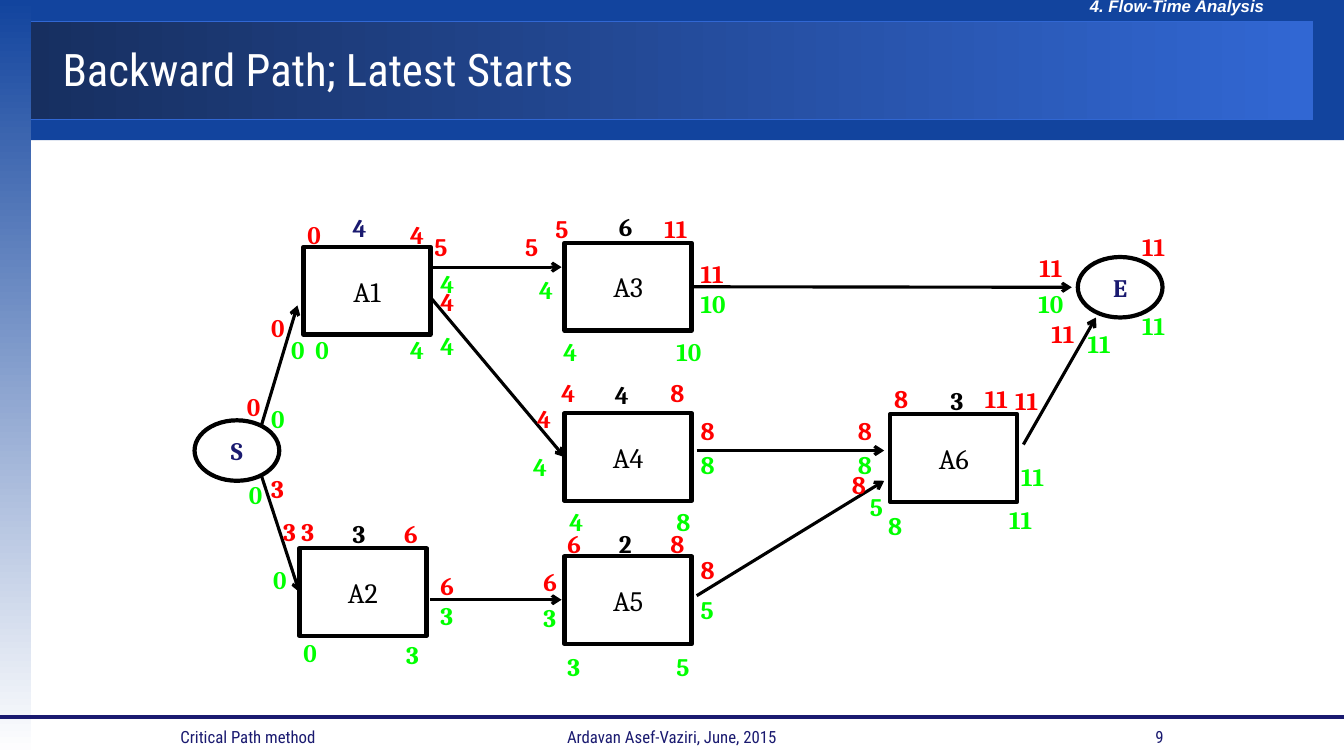
from dataclasses import dataclass

from lxml.etree import SubElement
from pptx import Presentation
from pptx.dml.color import RGBColor
from pptx.enum.shapes import MSO_CONNECTOR, MSO_SHAPE
from pptx.enum.text import MSO_ANCHOR, PP_ALIGN
from pptx.oxml.ns import qn
from pptx.util import Inches, Pt


@dataclass(frozen=True)
class Theme:
    """Colours, fonts and type sizes of the slide."""
    blue: str = "12449E"
    band_dark: str = "172F60"
    band_light: str = "3167D3"
    navy: str = "1A1A70"
    white: str = "FFFFFF"
    black: str = "000000"
    early: str = "00FF00"
    late: str = "FF0000"
    heading_font: str = "Roboto Condensed"
    diagram_font: str = "Cambria"
    header_font: str = "Arial"
    title_size: int = 32
    node_size: int = 20
    label_size: int = 18
    small_size: int = 12


T = Theme()

TASK_SIZE = (1.26, 0.87)
EVENT_SIZE = (0.84, 0.6)
TASKS = {
    "A1": (3.01, 2.45), "A2": (2.97, 5.44), "A3": (5.6, 2.41),
    "A4": (5.6, 4.1), "A5": (5.6, 5.52), "A6": (8.83, 4.11),
}
EVENTS = {"S": (1.93, 4.17), "E": (10.69, 2.55)}

ARROWS = [
    ((4.27, 2.65), (5.57, 2.65), None, None),
    ((4.27, 2.95), (5.57, 4.55), None, "A4"),
    ((4.27, 5.95), (5.57, 5.95), None, None),
    ((6.91, 4.47), (8.77, 4.47), None, None),
    ((6.91, 5.91), (8.77, 4.77), None, None),
    ((6.91, 2.85), (10.63, 2.85), "A3", None),
    ((10.15, 4.41), (10.87, 3.15), None, None),
    ((2.59, 4.23), (2.95, 3.03), None, None),
    ((2.59, 4.71), (2.95, 5.85), None, "A2"),
]

DURATIONS = {
    "2": [(6.04, 5.19)],
    "3": [(3.4, 5.09), (9.33, 3.77)],
    "4": [(6, 3.71)],
    "6": [(6.04, 2.05)],
}
EARLY_TIMES = {
    "0": [(2.59, 3.95), (2.37, 4.71), (2.79, 3.27), (2.61, 5.55), (3.03, 3.27), (2.91, 6.27)],
    "3": [(3.93, 6.29), (4.27, 5.91), (5.29, 5.93), (5.53, 6.41)],
    "4": [(3.97, 3.27), (4.27, 3.23), (4.27, 2.61), (5.25, 2.67), (5.19, 4.43),
          (5.55, 4.97), (5.49, 3.29)],
    "5": [(6.61, 6.41), (6.85, 5.85), (8.53, 4.83)],
    "8": [(6.61, 4.97), (6.85, 4.41), (8.41, 4.41), (8.71, 5.01)],
    "10": [(6.61, 3.29), (6.85, 2.81), (10.2, 2.81)],
    "11": [(9.91, 4.95), (10.69, 3.21), (11.23, 3.03), (10.03, 4.53)],
}
LATE_TIMES = {
    "0": [(2.95, 2.13), (2.59, 3.05), (2.35, 3.83)],
    "3": [(2.89, 5.07), (2.71, 5.07), (2.59, 4.65)],
    "4": [(5.47, 3.69), (5.23, 3.95), (4.27, 2.79), (3.97, 2.13)],
    "5": [(5.41, 2.07), (5.11, 2.25), (4.21, 2.25)],
    "6": [(5.53, 5.19), (5.29, 5.57), (4.27, 5.61), (3.91, 5.09)],
    "8": [(8.77, 3.75), (8.41, 4.07), (8.35, 4.61), (6.85, 4.07), (6.85, 5.45),
          (6.55, 3.69), (6.55, 5.19)],
    "11": [(11.23, 2.25), (10.21, 2.45), (10.33, 3.11), (6.85, 2.51), (9.97, 3.77),
           (6.49, 2.07), (9.67, 3.75)],
}


def rgb(value):
    """Turn a hex string into a colour."""
    return RGBColor.from_string(value)


def write(sp, text, font, size, color, bold=False, italic=False, align=PP_ALIGN.LEFT):
    """Put one formatted line of text into a shape."""
    tf = sp.text_frame
    tf.text = text
    tf.word_wrap = True
    p = tf.paragraphs[0]
    p.alignment = align
    f = p.runs[0].font
    f.name, f.size, f.bold, f.italic = font, Pt(size), bold, italic
    f.color.rgb = rgb(color)
    return tf


def add_text(s, box, text, font, size, color, **style):
    """Add a text box with one line."""
    sp = s.shapes.add_textbox(*map(Inches, box))
    return write(sp, text, font, size, color, **style)


def add_band(s, box, colors, angle=0, line=None):
    """Add a plain or gradient rectangle of the background."""
    sp = s.shapes.add_shape(MSO_SHAPE.RECTANGLE, *map(Inches, box))
    sp.shadow.inherit = False
    if len(colors) == 1:
        sp.fill.solid()
        sp.fill.fore_color.rgb = rgb(colors[0])
    else:
        sp.fill.gradient()
        sp.fill.gradient_angle = angle
        for stop, color in zip(sp.fill.gradient_stops, colors):
            stop.color.rgb = rgb(color)
    if line:
        sp.line.color.rgb = rgb(line)
        sp.line.width = Pt(0.75)
    else:
        sp.line.fill.background()


def add_node(s, kind, at, size, name, text_size, color, bold):
    """Add an outlined node with its centred name."""
    sp = s.shapes.add_shape(kind, *map(Inches, at + size))
    sp.shadow.inherit = False
    sp.fill.background()
    sp.line.color.rgb = rgb(T.black)
    sp.line.width = Pt(3)
    tf = write(sp, name, T.diagram_font, text_size, color, bold=bold, align=PP_ALIGN.CENTER)
    tf.vertical_anchor = MSO_ANCHOR.MIDDLE
    tf.margin_left = tf.margin_right = tf.margin_top = tf.margin_bottom = 0
    return sp


def add_line(s, start, end, color, width, arrow=False):
    """Add a straight line, with an arrowhead at its end if asked."""
    sp = s.shapes.add_connector(MSO_CONNECTOR.STRAIGHT, *map(Inches, start + end))
    sp.line.color.rgb = rgb(color)
    sp.line.width = Pt(width)
    if arrow:
        SubElement(sp.line._get_or_add_ln(), qn("a:tailEnd"), type="arrow")
    SubElement(sp.element.spPr, qn("a:effectLst"))
    return sp


def add_labels(s, places, color):
    """Add a number at each of its places."""
    for text, points in places.items():
        width = 0.34 if len(text) == 1 else 0.54
        for at in points:
            add_text(s, at + (width, 0.4), text, T.diagram_font, T.label_size, color, bold=True)


def add_frame(s):
    """Add the bands, header, title and footer."""
    add_band(s, (0.26, 0, 13.07, 1.39), [T.blue])
    add_band(s, (0.26, 0.21, 12.76, 0.98), [T.band_dark, T.band_light], line=T.band_light)
    add_band(s, (0, 0, 0.31, 7.5), [T.blue, T.white], angle=270)
    add_text(s, (10.71, -0.09, 2.78, 0.3), "4. Flow-Time Analysis", T.header_font,
             T.small_size, T.white, bold=True, italic=True)
    add_line(s, (0, 7.11), (13.33, 7.11), T.navy, 3)

    title = s.shapes.title
    title.left, title.top, title.width, title.height = map(Inches, (0.52, 0.21, 12.39, 0.94))
    tf = write(title, "Backward Path; Latest Starts", T.heading_font, T.title_size, T.white)
    tf.vertical_anchor = MSO_ANCHOR.MIDDLE
    s.shapes.element.append(title.element)

    for left, width, text, align in (
        (1.69, 2.33, "Critical Path method", PP_ALIGN.LEFT),
        (5.08, 3.17, "Ardavan Asef-Vaziri, June, 2015", PP_ALIGN.CENTER),
        (9.31, 2.33, "9", PP_ALIGN.RIGHT),
    ):
        tf = add_text(s, (left, 7.11, width, 0.4), text, T.heading_font, T.small_size,
                      T.navy, align=align)
        tf.vertical_anchor = MSO_ANCHOR.MIDDLE


def main():
    """Build the slide and save it."""
    prs = Presentation()
    prs.slide_width, prs.slide_height = Inches(13.33), Inches(7.5)
    s = prs.slides.add_slide(prs.slide_layouts[5])
    add_frame(s)
    tasks = {name: add_node(s, MSO_SHAPE.RECTANGLE, at, TASK_SIZE, name, T.node_size,
                            T.black, False) for name, at in TASKS.items()}
    for name, at in EVENTS.items():
        add_node(s, MSO_SHAPE.OVAL, at, EVENT_SIZE, name, T.label_size, T.navy, True)
    for start, end, source, target in ARROWS:
        arrow = add_line(s, start, end, T.black, 2.25, arrow=True)
        if source:
            arrow.begin_connect(tasks[source], 3)
        if target:
            arrow.end_connect(tasks[target], 1)
    add_labels(s, {"4": [(3.4, 2.06)]}, T.navy)
    add_labels(s, DURATIONS, T.black)
    add_labels(s, EARLY_TIMES, T.early)
    add_labels(s, LATE_TIMES, T.late)
    prs.save("out.pptx")


if __name__ == "__main__":
    main()
